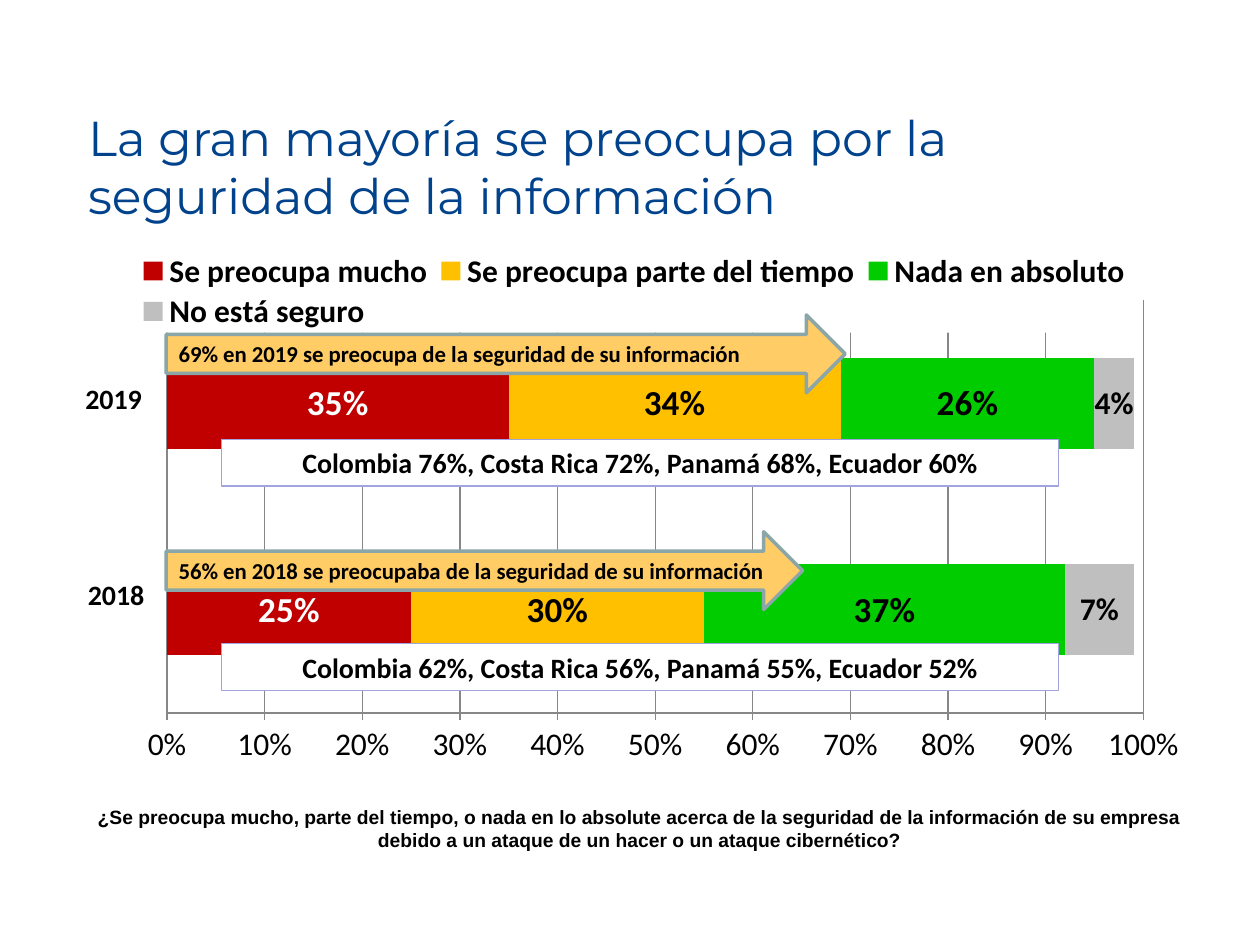
from lxml import etree
from pptx import Presentation
from pptx import util as u
from pptx.chart.data import CategoryChartData
from pptx.dml.color import RGBColor
from pptx.enum import chart as ch, shapes, text
from pptx.oxml import parse_xml
from pptx.oxml.ns import nsdecls, qn

# Content
TITLE = "La gran mayoría se preocupa por la seguridad de la información"
ASK = ("¿Se preocupa mucho, parte del tiempo, o nada en lo absolute acerca de la "
       "seguridad de la información de su empresa debido a un ataque de un hacer "
       "o un ataque cibernético?")
CATS = ["1", "2"]
SERIES = [  # name, values, fill, label colour, label size
    ("Se preocupa mucho", (0.25, 0.35), "red", "white", 20),
    ("Se preocupa parte del tiempo", (0.30, 0.34), "gold", "black", 20),
    ("Nada en absoluto", (0.37, 0.26), "green", "black", 20),
    ("No está seguro", (0.07, 0.04), "gray", "black", 18),
]
YEARS = [  # year, its left and top, arrow top and width, arrow text, box top, box text
    ("2019", 1.47, 7.57, 6.35, 13.69,
     "69% en 2019 se preocupa de la seguridad de su información",
     8.86, "Colombia 76%, Costa Rica 72%, Panamá 68%, Ecuador 60%"),
    ("2018", 1.52, 11.51, 10.72, 12.83,
     "56% en 2018 se preocupaba de la seguridad de su información",
     12.98, "Colombia 62%, Costa Rica 56%, Panamá 55%, Ecuador 52%"),
]
HEX = {"red": "C00000", "gold": "FFC000", "green": "00CC00", "gray": "BFBFBF",
       "white": "FFFFFF", "black": "000000", "navy": "00438C", "sand": "FFCC66",
       "teal": "8AA6A8", "lilac": "A3A3E0", "grid": "878787"}
LEFT, MID = text.PP_ALIGN.LEFT, text.PP_ALIGN.CENTER


def color(name):
    return RGBColor.from_string(HEX[name])


def style(font, size, tint="black", bold=True, face="Calibri"):
    font.name, font.size, font.bold = face, u.Pt(size), bold
    font.color.rgb = color(tint)


def write(shape, words, size, align=LEFT, anchor=text.MSO_ANCHOR.MIDDLE, **form):
    frame = shape.text_frame
    frame.word_wrap = True
    frame.auto_size = text.MSO_AUTO_SIZE.NONE
    frame.vertical_anchor = anchor
    para = frame.paragraphs[0]
    para.alignment = align
    run = para.add_run()
    run.text = words
    style(run.font, size, **form)


def cm(*nums):
    return [u.Cm(n) for n in nums]


def block(kind, spot, fill, line, width):
    shape = slide.shapes.add_shape(kind, *cm(*spot))
    shape.shadow.inherit = False
    shape.fill.solid()
    shape.fill.fore_color.rgb = color(fill)
    shape.line.color.rgb = color(line)
    shape.line.width = u.Pt(width)
    return shape


def layout(x, y, w, h, inner=False):
    target = '<c:layoutTarget val="inner"/>' if inner else ""
    sizes = "".join(f'<c:{tag} val="{val}"/>' for tag, val in zip("xywh", (x, y, w, h)))
    return parse_xml(f'<c:layout {nsdecls("c")}><c:manualLayout>{target}'
                     '<c:xMode val="edge"/><c:yMode val="edge"/>'
                     f'{sizes}</c:manualLayout></c:layout>')


def swap(parent, new, after=None):
    for old in parent.findall(qn("c:layout")):
        parent.remove(old)
    if after is None:
        parent.insert(0, new)
    else:
        after.addnext(new)


deck = Presentation()
deck.slide_width, deck.slide_height = cm(25.4, 19.05)
slide = deck.slides.add_slide(deck.slide_layouts[5])

# Title
title = slide.shapes.title
title.left, title.top, title.width, title.height = cm(1.52, 1.22, 21.39, 3.18)
title.text_frame.margin_top = u.Cm(0.94)
title.text_frame.margin_bottom = 0
write(title, TITLE, 28, anchor=text.MSO_ANCHOR.TOP,
      tint="navy", bold=False, face="Montserrat")

# Stacked bars
data = CategoryChartData(number_format="0%")
data.categories = CATS
for name, vals, *_ in SERIES:
    data.add_series(name, vals)
chart = slide.shapes.add_chart(ch.XL_CHART_TYPE.BAR_STACKED,
                               *cm(1.47, 4.78, 22.86, 12.83), data).chart
style(chart.font, 18, bold=False)
chart.has_title = False
plot = chart.plots[0]
plot.gap_width, plot.overlap, plot.vary_by_categories = 128, 100, False
for bar, (_, _, fill, tint, size) in zip(plot.series, SERIES):
    bar.format.fill.solid()
    bar.format.fill.fore_color.rgb = color(fill)
    tags = bar.data_labels
    tags.show_value = True
    tags.number_format, tags.number_format_is_linked = "0%", False
    tags.position = ch.XL_LABEL_POSITION.CENTER
    style(tags.font, size, tint)

# Axes
chart.category_axis.visible = False
axis = chart.value_axis
axis.minimum_scale, axis.maximum_scale, axis.major_unit = 0, 1, 0.1
axis.has_major_gridlines = True
axis.major_tick_mark = ch.XL_TICK_MARK.OUTSIDE
axis.tick_labels.number_format = "0%"
axis.tick_labels.number_format_is_linked = False
for line in (axis.format.line, axis.major_gridlines.format.line):
    line.color.rgb = color("grid")
    line.width = u.Pt(0.75)

# Legend on white, above the bars
chart.has_legend = True
legend = chart.legend
legend.position = ch.XL_LEGEND_POSITION.TOP
legend.include_in_layout = False
style(legend.font, 18)
key = legend._element
swap(key, layout(0.05, 0.02, 0.89, 0.13), key.find(qn("c:legendPos")))
back = parse_xml(f'<c:spPr {nsdecls("c", "a")}><a:solidFill>'
                 f'<a:srgbClr val="{HEX["white"]}"/></a:solidFill></c:spPr>')
key.find(qn("c:txPr")).addprevious(back)
area = chart._chartSpace.find(".//" + qn("c:plotArea"))
swap(area, layout(0.083, 0.099, 0.861, 0.649, inner=True))

# Question below the chart
ask = slide.shapes.add_textbox(*cm(1.57, 16.1, 22.66, 1.19))
write(ask, ASK, 11, MID, face="Arial")

# Arrow, country box and label for each year
for year, left, top, high, wide, claim, low, lands in YEARS:
    arrow = block(shapes.MSO_SHAPE.RIGHT_ARROW, (3.35, high, wide, 1.57),
                  "sand", "teal", 2)
    write(arrow, claim, 13)
    box = block(shapes.MSO_SHAPE.RECTANGLE, (4.47, low, 16.87, 0.94),
                "white", "lilac", 0.75)
    write(box, lands, 16, MID)
    label = slide.shapes.add_textbox(*cm(left, top, 1.8, 0.94))
    write(label, year, 16)

deck.save("out.pptx")
